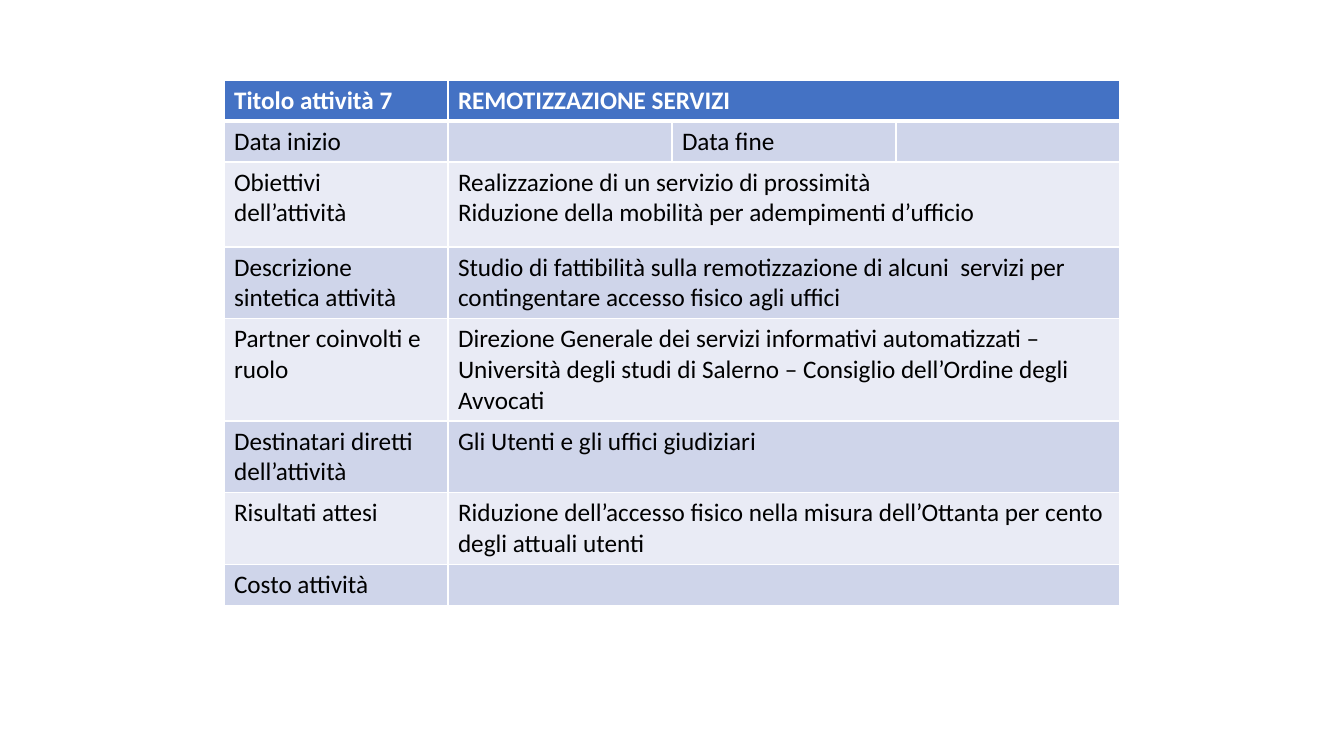
from lxml import etree
from pptx import Presentation
from pptx.dml.color import RGBColor
from pptx.oxml.ns import qn
from pptx.util import Emu, Pt

# Each row: cell texts; two texts mean the second spans the remaining columns
ACTIVITY = [
    ("Titolo attività 7", "REMOTIZZAZIONE SERVIZI"),
    ("Data inizio", "", "Data fine", ""),
    ("Obiettivi dell’attività",
     "Realizzazione di un servizio di prossimità\n"
     "Riduzione della mobilità per adempimenti d’ufficio"),
    ("Descrizione sintetica attività",
     "Studio di fattibilità sulla remotizzazione di alcuni  servizi per "
     "contingentare accesso fisico agli uffici"),
    ("Partner coinvolti e ruolo",
     "Direzione Generale dei servizi informativi automatizzati – Università "
     "degli studi di Salerno – Consiglio dell’Ordine degli Avvocati"),
    ("Destinatari diretti dell’attività", "Gli Utenti e gli uffici giudiziari"),
    ("Risultati attesi",
     "Riduzione dell’accesso fisico nella misura dell’Ottanta per cento "
     "degli attuali utenti"),
    ("Costo attività", ""),
]
COLUMNS = 4
LEFT, TOP, WIDTH, HEIGHT = 224, 80, 896, 519
ROW_HEIGHT, GOALS_ROW, GOALS_HEIGHT = 41, 2, 85  # other rows grow with their text
HEADER_FILL, BANDS = "4472C4", ("E9EBF5", "CFD5EA")
WHITE, BLACK = "FFFFFF", "000000"


def px(length):
    return Emu(round(length * 914400 / 100.8))


def color(value):
    return RGBColor.from_string(value)


def add_borders(cell, top, bottom):
    """Draw white cell borders; top and bottom widths are in points."""
    properties = cell._tc.get_or_add_tcPr()
    sides = (("L", 1), ("R", 1), ("T", top), ("B", bottom))
    for position, (side, width) in enumerate(sides):
        line = etree.Element(qn(f"a:ln{side}"), w=str(Pt(width)))
        fill = etree.SubElement(line, qn("a:solidFill"))
        etree.SubElement(fill, qn("a:srgbClr"), val=WHITE)
        properties.insert(position, line)


def write(cell, text, is_header):
    frame = cell.text_frame
    for index, sentence in enumerate(text.split("\n")):
        paragraph = frame.add_paragraph() if index else frame.paragraphs[0]
        paragraph.font.size = Pt(18)
        if not sentence:
            continue
        run = paragraph.add_run()
        run.text = sentence
        run.font.name = "Calibri"
        run.font.size = Pt(18)
        run.font.bold = is_header
        run.font.color.rgb = color(WHITE if is_header else BLACK)


def main():
    deck = Presentation()
    deck.slide_width, deck.slide_height = px(1344), px(756)
    slide = deck.slides.add_slide(deck.slide_layouts[6])
    frame = slide.shapes.add_table(
        len(ACTIVITY), COLUMNS, px(LEFT), px(TOP), px(WIDTH), px(HEIGHT))
    sheet = frame.table

    for column in sheet.columns:
        column.width = px(WIDTH / COLUMNS)
    for r, texts in enumerate(ACTIVITY):
        sheet.rows[r].height = px(GOALS_HEIGHT if r == GOALS_ROW else ROW_HEIGHT)
        for c in range(COLUMNS):
            cell = sheet.cell(r, c)
            cell.fill.solid()
            cell.fill.fore_color.rgb = color(BANDS[r % 2] if r else HEADER_FILL)
            add_borders(cell, top=3 if r == 1 else 1, bottom=1 if r else 3)
        for c, text in enumerate(texts):
            write(sheet.cell(r, c), text, is_header=r == 0)
        if len(texts) < COLUMNS:
            sheet.cell(r, 1).merge(sheet.cell(r, COLUMNS - 1))
    frame.height = px(HEIGHT)
    deck.save("out.pptx")


if __name__ == "__main__":
    main()
